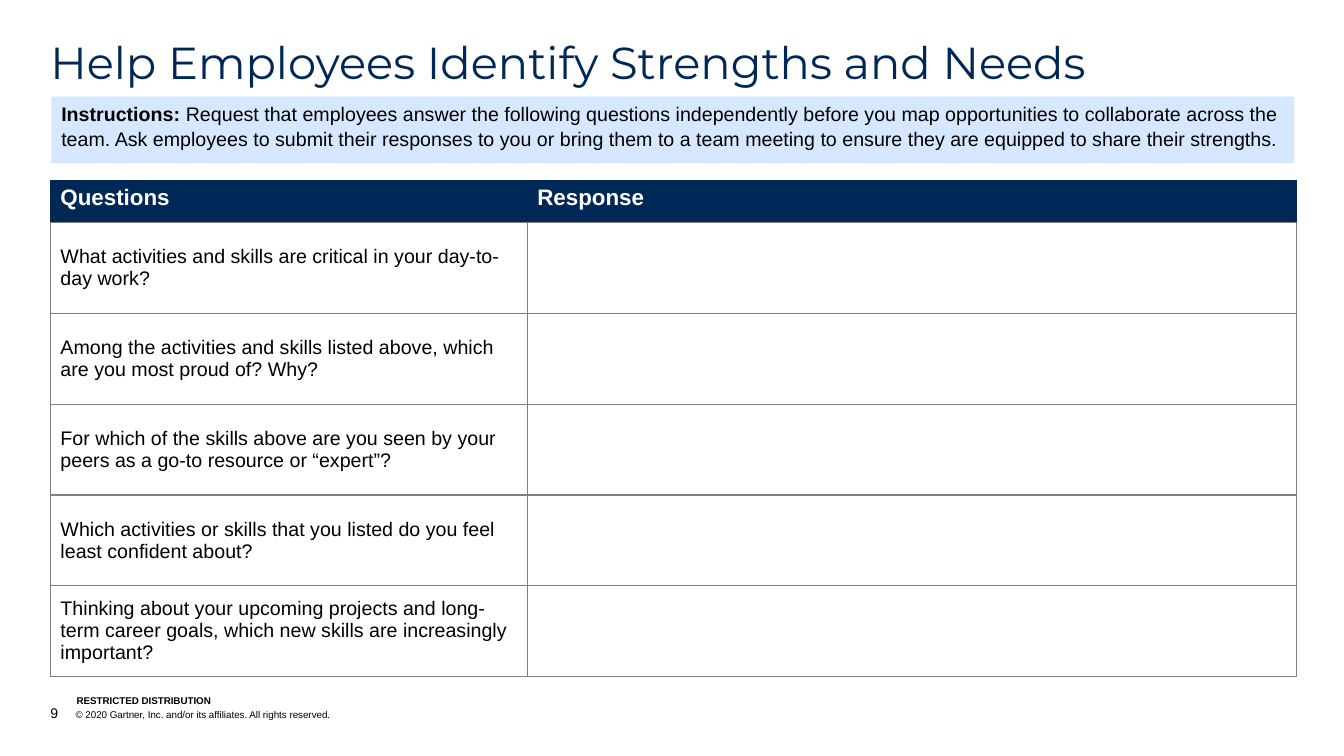
from lxml import etree
from pptx import Presentation
from pptx import util as u
from pptx.dml.color import RGBColor
from pptx.enum import shapes, text
from pptx.oxml import ns

PX = 9144  # 100 px to the inch
NAVY = RGBColor(0x00, 0x28, 0x56)
PALE = RGBColor(0xD5, 0xE8, 0xFF)
GRAY = RGBColor(0x80, 0x80, 0x80)
BLACK = RGBColor(0, 0, 0)
WHITE = RGBColor(0xFF, 0xFF, 0xFF)

TITLE = "Help Employees Identify Strengths and Needs"
INTRO = (
    "Request that employees answer the following questions independently before "
    "you map opportunities to collaborate across the team. Ask employees to submit "
    "their responses to you or bring them to a team meeting to ensure they are "
    "equipped to share their strengths."
)
HEADS = ["Questions", "Response"]
ASKS = [
    "What activities and skills are critical in your day-to-day work?",
    "Among the activities and skills listed above, which are you most proud of? Why?",
    "For which of the skills above are you seen by your peers as a go-to resource or “expert”?",
    "Which activities or skills that you listed do you feel least confident about?",
    "Thinking about your upcoming projects and long-term career goals, "
    "which new skills are increasingly important?",
]
COLS = [473, 763]
HEAD_H, ROW_H = 42, 90


def px(*nums):
    return [u.Emu(n * PX) for n in nums]


def add_run(para, words, size, color=BLACK, bold=False, font="Arial"):
    run = para.add_run()
    run.text = words
    run.font.name = font
    run.font.size = u.Pt(size)
    run.font.bold = bold
    run.font.color.rgb = color


def set_frame(shape, anchor, left=0, top=0):
    """Set wrap, anchor and insets; return the first paragraph."""
    frame = shape.text_frame
    frame.word_wrap = True
    frame.vertical_anchor = anchor
    frame.margin_left, frame.margin_top = px(left, top)
    frame.margin_right = frame.margin_bottom = 0
    para = frame.paragraphs[0]
    para.alignment = text.PP_ALIGN.LEFT
    return para


def add_label(slide, box, anchor):
    return set_frame(slide.shapes.add_textbox(*px(*box)), anchor)


def add_banner(slide, box):
    shape = slide.shapes.add_shape(shapes.MSO_SHAPE.RECTANGLE, *px(*box))
    shape.shadow.inherit = False
    shape.fill.solid()
    shape.fill.fore_color.rgb = PALE
    shape.line.fill.background()
    para = set_frame(shape, text.MSO_ANCHOR.TOP, 10, 4)
    para.line_spacing = 1.05
    add_run(para, "Instructions: ", 14, bold=True)
    add_run(para, INTRO, 14)


def hang_tab(para, width):
    """Give a hanging indent with a tab stop at its edge."""
    props = para._p.get_or_add_pPr()
    step = width * PX
    props.set("marL", str(step))
    props.set("indent", str(-step))
    tabs = etree.SubElement(props, ns.qn("a:tabLst"))
    etree.SubElement(tabs, ns.qn("a:tab"), pos=str(step), algn="l")


def set_edges(cell, colors):
    """Draw the left, right, top and bottom borders."""
    props = cell._tc.get_or_add_tcPr()
    for side, color in zip("LRTB", colors):
        line = etree.SubElement(props, ns.qn("a:ln" + side), w=str(u.Pt(1)))
        fill = etree.SubElement(line, ns.qn("a:solidFill"))
        etree.SubElement(fill, ns.qn("a:srgbClr"), val=str(color))


def add_grid(slide, left, top):
    size = px(left, top, sum(COLS), HEAD_H + ROW_H * len(ASKS))
    table = slide.shapes.add_table(len(ASKS) + 1, len(COLS), *size).table
    table.horz_banding = False
    for col, width in zip(table.columns, px(*COLS)):
        col.width = width
    for i, row in enumerate(table.rows):
        row.height = px(ROW_H if i else HEAD_H)[0]
    for i, cell in enumerate(table.iter_cells()):
        if i < len(HEADS):
            set_edges(cell, [NAVY, NAVY, NAVY, GRAY])
            cell.fill.solid()
            cell.fill.fore_color.rgb = NAVY
            add_run(cell.text_frame.paragraphs[0], HEADS[i], 16, WHITE, True)
        else:
            set_edges(cell, [GRAY] * 4)
            cell.fill.background()
            cell.vertical_anchor = text.MSO_ANCHOR.MIDDLE
    for i, ask in enumerate(ASKS, 1):
        add_run(table.cell(i, 0).text_frame.paragraphs[0], ask, 14)


def add_footer(slide):
    para = add_label(slide, (50, 699, 799, 17), text.MSO_ANCHOR.BOTTOM)
    hang_tab(para, 25)
    add_run(para, "9", 10)
    add_run(para, "\t© 2020 Gartner, Inc. and/or its affiliates. All rights reserved.", 7)
    para = add_label(slide, (76, 689, 253, 12), text.MSO_ANCHOR.BOTTOM)
    add_run(para, "RESTRICTED DISTRIBUTION", 7, bold=True)


def main():
    prs = Presentation()
    prs.slide_width, prs.slide_height = px(1333, 750)
    slide = prs.slides.add_slide(prs.slide_layouts[6])
    title = add_label(slide, (50, 40, 1233, 48), text.MSO_ANCHOR.TOP)
    title.line_spacing = 0.9
    add_run(title, TITLE, 32, NAVY, font="Montserrat")
    add_banner(slide, (51, 96, 1233, 66))
    add_grid(slide, 50, 179)
    add_footer(slide)
    prs.save("out.pptx")


if __name__ == "__main__":
    main()
